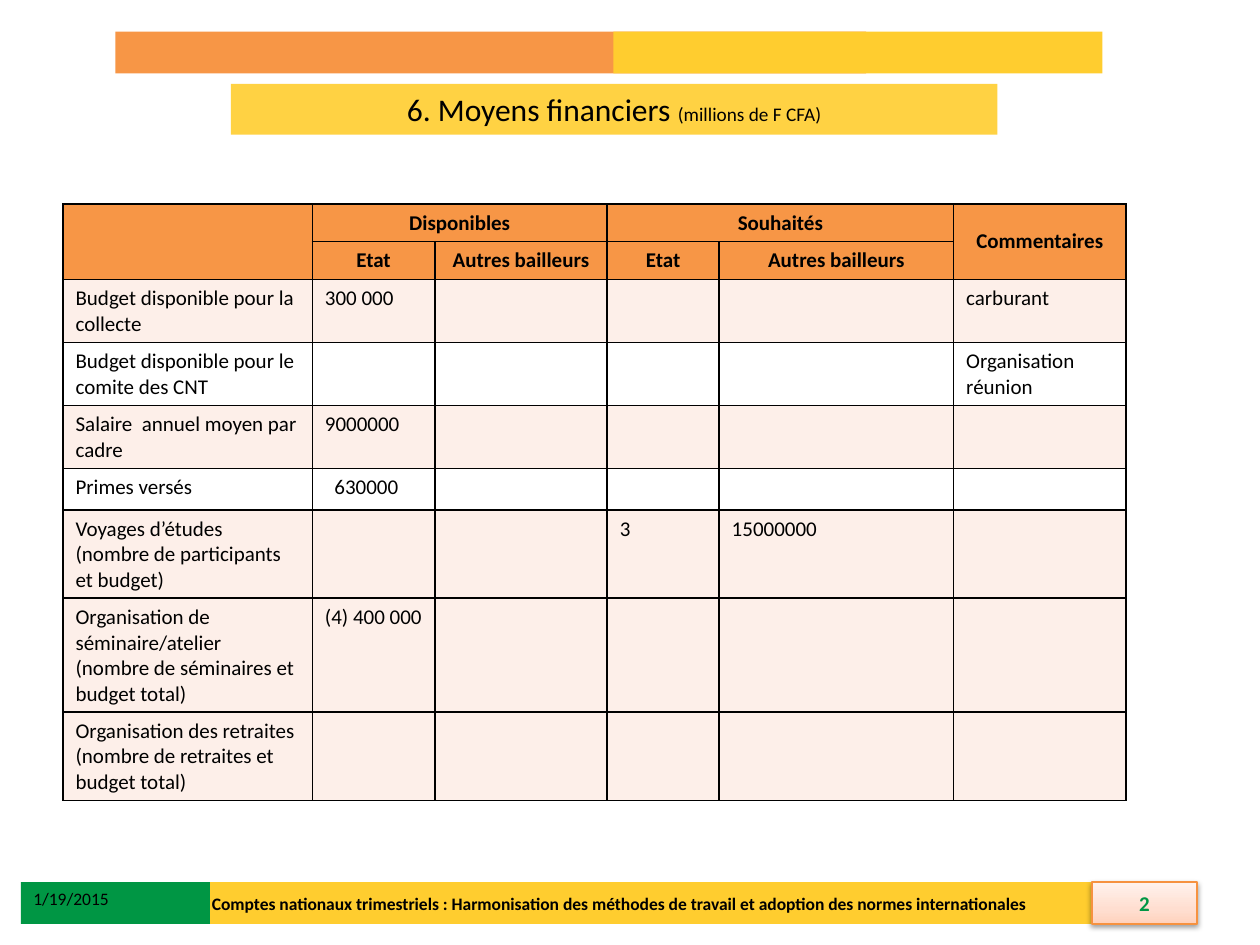
from lxml import etree
from pptx import Presentation
from pptx.dml.color import RGBColor
from pptx.enum.shapes import MSO_SHAPE
from pptx.enum.text import MSO_ANCHOR, PP_ALIGN
from pptx.oxml.ns import qn
from pptx.util import Pt

RECTANGLE = MSO_SHAPE.RECTANGLE
MIDDLE, TOP = MSO_ANCHOR.MIDDLE, MSO_ANCHOR.TOP
CENTER, LEFT = PP_ALIGN.CENTER, PP_ALIGN.LEFT
FONT = "Calibri"
COLORS = {
    "yellow": "FFCD2F", "title": "FFD243", "orange": "F79646",
    "green": "009644", "badge_line": "F69240", "black": "000000",
    "tint": "FDEFE9", "white": "FFFFFF",
}
BADGE_STOPS = [(0, "FFD2BD"), (35, "FFDED0"), (100, "FFF2ED")]

BAND_TOP, FOOTER_TOP, BAND_HEIGHT = 18, 504, 24
TABLE_LEFT, TABLE_TOP = 36, 116.5
COLUMN_WIDTHS = [142.5, 70, 98.5, 64, 134, 98.5]
ROW_HEIGHTS = [21.5, 21.5, 36, 36, 36, 23.5, 50.5, 65, 50.5]
HEADER_ROWS = 2
MERGES = [((0, 0), (1, 0)), ((0, 1), (0, 2)), ((0, 3), (0, 4)), ((0, 5), (1, 5))]
PLAIN_ROWS = (3, 5)
BUDGET = [
    ["", "Disponibles", "", "Souhaités", "", "Commentaires"],
    ["", "Etat", "Autres bailleurs", "Etat", "Autres bailleurs", ""],
    ["Budget disponible pour la collecte", "300 000", "", "", "", "carburant"],
    ["Budget disponible pour le comite des CNT", "", "", "", "", "Organisation réunion"],
    ["Salaire  annuel moyen par cadre", "9000000", "", "", "", ""],
    ["Primes versés", "630000", "", "", "", ""],
    ["Voyages d’études (nombre de participants et budget)", "", "", "3", "15000000", ""],
    ["Organisation de séminaire/atelier (nombre de séminaires et budget total)",
     "(4) 400 000", "", "", "", ""],
    ["Organisation des retraites (nombre de retraites et budget total)",
     "", "", "", "", ""],
]
BONUS_CELL = (5, 1)


def rgb(name):
    return RGBColor.from_string(COLORS[name])


def add_node(parent, tag, **attributes):
    values = {key: str(value) for key, value in attributes.items()}
    return etree.SubElement(parent, qn(tag), values)


def add_band(shapes, color, left, top, width, height=BAND_HEIGHT):
    band = shapes.add_shape(RECTANGLE, Pt(left), Pt(top), Pt(width), Pt(height))
    band.shadow.inherit = False
    band.fill.solid()
    band.fill.fore_color.rgb = rgb(color)
    band.line.fill.background()
    return band


def write(frame, runs, align=LEFT, anchor=TOP, color="black", bold=False):
    """Fill a text frame with one paragraph of (text, size) runs."""
    frame.word_wrap = True
    frame.vertical_anchor = anchor
    paragraph = frame.paragraphs[0]
    paragraph.alignment = align
    for text, size in runs:
        run = paragraph.add_run()
        run.text = text
        run.font.color.rgb = rgb(color)
        for name, value in {"name": FONT, "size": Pt(size), "bold": bold}.items():
            setattr(run.font, name, value)


def add_label(slide, text, left, top, width, height, **style):
    label = slide.shapes.add_textbox(Pt(left), Pt(top), Pt(width), Pt(height))
    write(label.text_frame, [(text, 10)], **style)


def add_page_badge(slide, number):
    """Slide number on an upward gradient with a soft shadow."""
    badge = add_band(slide.shapes, "white", 624, FOOTER_TOP, 60)
    badge.fill.gradient()
    badge.fill.gradient_angle = 90
    properties = badge._element.spPr
    stops = properties.find(".//" + qn("a:gsLst"))
    for stop in list(stops):
        stops.remove(stop)
    for position, color in BADGE_STOPS:
        stop = add_node(stops, "a:gs", pos=position * 1000)
        add_node(stop, "a:srgbClr", val=color)
    badge.line.color.rgb = rgb("badge_line")
    badge.line.width = Pt(0.75)
    shadow = add_node(properties.find(qn("a:effectLst")), "a:outerShdw",
                      blurRad=Pt(3.1), dist=Pt(1.6), dir=90 * 60000, rotWithShape=0)
    shade = add_node(shadow, "a:srgbClr", val=COLORS["black"])
    add_node(shade, "a:alpha", val=38000)
    write(badge.text_frame, [(number, 12)], CENTER, MIDDLE, "green", True)


def add_borders(cell):
    properties = cell._tc.get_or_add_tcPr()
    for side in "LRTB":
        border = add_node(properties, "a:ln" + side, w=Pt(1))
        fill = add_node(border, "a:solidFill")
        add_node(fill, "a:srgbClr", val=COLORS["black"])


def format_cell(cell, text, row):
    header = row < HEADER_ROWS
    add_borders(cell)
    cell.fill.solid()
    body = "white" if row in PLAIN_ROWS else "tint"
    cell.fill.fore_color.rgb = rgb("orange" if header else body)
    cell.vertical_anchor = MIDDLE if header else TOP
    if text:
        write(cell.text_frame, [(text, 12)], CENTER if header else LEFT,
              None, bold=header)
    else:
        # Keeps empty cells from stretching their row
        add_node(cell.text_frame.paragraphs[0]._p, "a:endParaRPr", sz=1200)


def add_budget_table(slide):
    frame = slide.shapes.add_table(
        len(ROW_HEIGHTS), len(COLUMN_WIDTHS), Pt(TABLE_LEFT), Pt(TABLE_TOP),
        Pt(sum(COLUMN_WIDTHS)), Pt(sum(ROW_HEIGHTS)))
    table = frame.table
    for column, width in zip(table.columns, COLUMN_WIDTHS):
        column.width = Pt(width)
    for row, height in zip(table.rows, ROW_HEIGHTS):
        row.height = Pt(height)
    for row, texts in enumerate(BUDGET):
        for column, text in enumerate(texts):
            format_cell(table.cell(row, column), text, row)
    for first, last in MERGES:
        table.cell(*first).merge(table.cell(*last))
    table.cell(*BONUS_CELL).margin_left = Pt(12.6)


def main():
    presentation = Presentation()
    presentation.slide_width, presentation.slide_height = Pt(720), Pt(540)
    slide = presentation.slides.add_slide(presentation.slide_layouts[6])

    add_band(slide.shapes, "yellow", 114, FOOTER_TOP, 570)
    title = add_band(slide.shapes, "title", 132, 48, 438, 29)
    write(title.text_frame,
          [("6. Moyens financiers ", 18), ("(millions de F CFA)", 11)], CENTER)

    top_bands = slide.shapes.add_group_shape().shapes
    add_band(top_bands, "orange", 66, BAND_TOP, 429)
    add_band(top_bands, "yellow", 350.5, BAND_TOP, 279.5)

    add_page_badge(slide, "2")
    add_band(slide.shapes, "green", 12, FOOTER_TOP, 108)
    add_label(slide, "Comptes nationaux trimestriels : Harmonisation des méthodes "
              "de travail et adoption des normes internationales",
              114, FOOTER_TOP, 486, BAND_HEIGHT, anchor=MIDDLE, bold=True)
    add_label(slide, "1/19/2015", 12, FOOTER_TOP, 102, 19.5)
    add_budget_table(slide)
    presentation.save("out.pptx")


if __name__ == "__main__":
    main()
